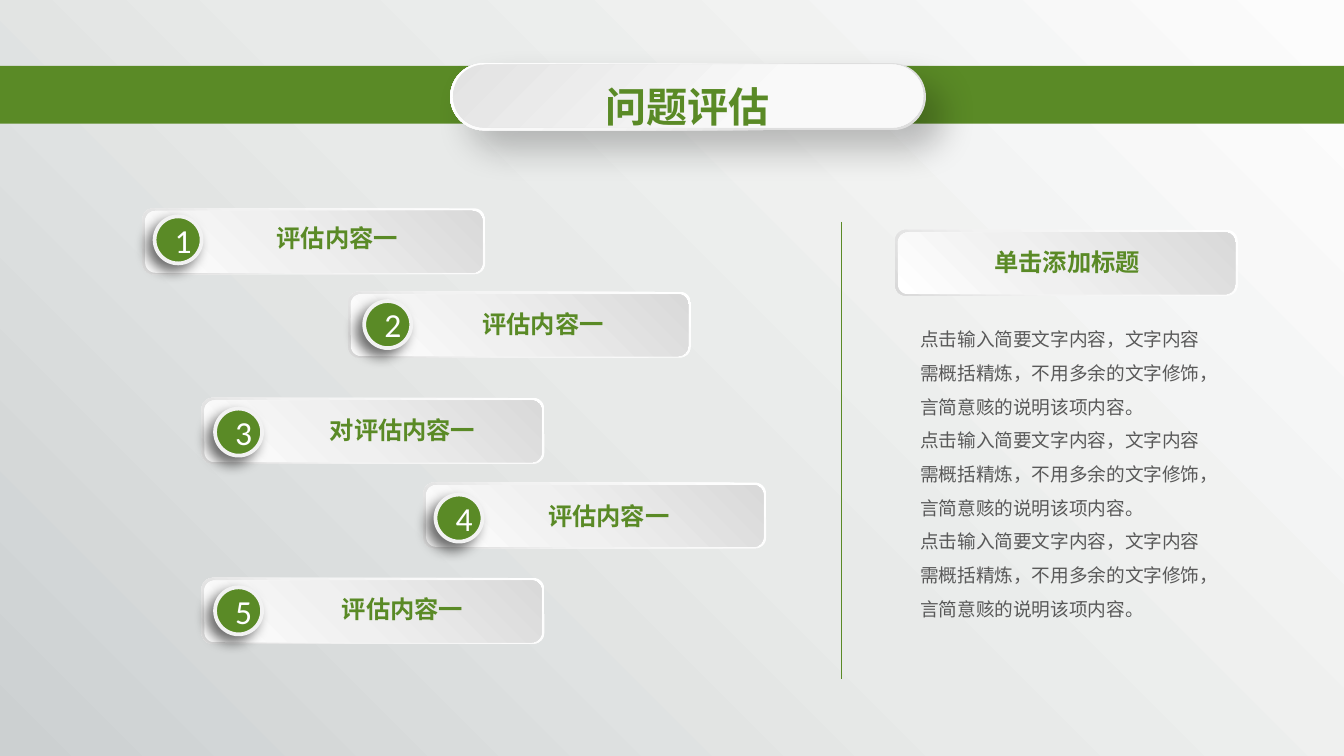
from lxml.etree import SubElement
from pptx import Presentation
from pptx.dml.color import RGBColor
from pptx.enum.shapes import MSO_CONNECTOR, MSO_SHAPE
from pptx.enum.text import MSO_ANCHOR, MSO_AUTO_SIZE, PP_ALIGN
from pptx.oxml.ns import qn
from pptx.util import Inches, Pt

WIDTH = 10
HEIGHT = WIDTH * 9 / 16
COLORS = {"green": "5A8A26", "rim": "F2F2F2", "white": "FFFFFF", "body": "595959", "shadow": "000000"}
CJK = "Noto Sans CJK SC"

# Gradients: stops as (percent, colour), then the clockwise angle
BACKDROP = ([(0, "CCD0D1"), (49, "E8EAE9"), (100, "FCFCFC")], 315)
TITLE_RIM = ([(1, "DEDEDE"), (30, "E0E0E0"), (61, "F6F6F6"), (100, "FFFFFF")], 225)
TITLE_FACE = ([(0, "E3E3E3"), (67, "F9F9F9")], 45)
PANEL_RIM = ([(0, "FFFFFF"), (62, "F2F2F2"), (100, "D9D9D9")], 135)
PANEL_FACE = ([(0, "FFFFFF"), (42, "F0F0F0"), (100, "D9D9D9")], 315)

# Shadows: opacity percent, blur, distance, direction
TITLE_SHADOW = (24, 19, 14, 45)
BADGE_SHADOW = (57, 7, 5, 135)

TITLE = "问题评估"
# Label, panel left and top, badge left and top, label left, top and width
ITEMS = [
    ("评估内容一", (1.06, 1.55), (1.15, 1.61), (1.43, 1.66, 2.16)),
    ("评估内容一", (2.59, 2.17), (2.71, 2.24), (3.00, 2.30, 2.08)),
    ("对评估内容一", (1.50, 2.96), (1.60, 3.04), (1.98, 3.09, 2.03)),
    ("评估内容一", (3.15, 3.59), (3.24, 3.68), (3.45, 3.73, 2.16)),
    ("评估内容一", (1.50, 4.30), (1.60, 4.37), (1.98, 4.42, 2.03)),
]
SIDE_HEADING = "单击添加标题"
SIDE_TEXT = ["点击输入简要文字内容，文字内容需概括精炼，不用多余的文字修饰，言简意赅的说明该项内容。"] * 3


def rgb(name):
    return RGBColor.from_string(COLORS[name])


def set_gradient(shape, stops, angle):
    shape.fill.gradient()
    shape.fill.gradient_angle = (360 - angle) % 360
    stop_list = shape.element.spPr.find(qn("a:gradFill")).find(qn("a:gsLst"))
    for old in list(stop_list):
        stop_list.remove(old)
    for percent, color in stops:
        stop = SubElement(stop_list, qn("a:gs"), pos=str(percent * 1000))
        SubElement(stop, qn("a:srgbClr"), val=color)


def set_shadow(shape, opacity, blur, distance, direction):
    effects = shape.element.spPr.find(qn("a:effectLst"))
    outer = SubElement(effects, qn("a:outerShdw"), blurRad=str(Pt(blur)), dist=str(Pt(distance)),
                       dir=str(direction * 60000), algn="ctr", rotWithShape="0")
    color = SubElement(outer, qn("a:srgbClr"), val=COLORS["shadow"])
    SubElement(color, qn("a:alpha"), val=str(opacity * 1000))


def add_box(parent, kind, area, fill):
    """Add an unlined shape; fill is a colour name or a gradient."""
    box = parent.shapes.add_shape(kind, *map(Inches, area))
    box.shadow.inherit = False
    box.line.fill.background()
    if isinstance(fill, str):
        box.fill.solid()
        box.fill.fore_color.rgb = rgb(fill)
    else:
        set_gradient(box, *fill)
    return box


def style(para, size, color, font=CJK, bold=False, align=PP_ALIGN.CENTER):
    para.alignment = align
    para.font.size = Pt(size)
    para.font.bold = bold
    para.font.color.rgb = rgb(color)
    para.font.name = font
    for span in para.runs:
        span.font.name = font
        SubElement(span.font._element, qn("a:ea"), typeface=font)


def add_text(parent, area, lines, size, color, spacing=None, inset=True, **look):
    box = parent.shapes.add_textbox(*map(Inches, area))
    frame = box.text_frame
    frame.word_wrap = True
    frame.auto_size = MSO_AUTO_SIZE.SHAPE_TO_FIT_TEXT
    if not inset:
        frame.margin_left = frame.margin_top = frame.margin_right = frame.margin_bottom = 0
    frame.text = "\n".join(lines)
    for para in frame.paragraphs:
        style(para, size, color, **look)
        if spacing:
            para.line_spacing = spacing


def add_panel(page, left, top):
    group = page.shapes.add_group_shape()
    add_box(group, MSO_SHAPE.ROUNDED_RECTANGLE, (left, top, 2.55, 0.49), PANEL_RIM)
    add_box(group, MSO_SHAPE.ROUNDED_RECTANGLE, (left + 0.02, top + 0.02, 2.51, 0.46), PANEL_FACE)
    return group


def add_label(group, left, top, width, text, font=CJK):
    add_text(group, (left, top, width, 0.22), [text], 13, "green", inset=False, font=font, bold=True)


def add_badge(group, left, top, number):
    badge = add_box(group, MSO_SHAPE.OVAL, (left, top, 0.35, 0.35), "green")
    badge.line.color.rgb = rgb("rim")
    badge.line.width = Pt(2)
    set_shadow(badge, *BADGE_SHADOW)
    frame = badge.text_frame
    frame.vertical_anchor = MSO_ANCHOR.MIDDLE
    frame.text = str(number)
    style(frame.paragraphs[0], 18, "white", font="Calibri")


def add_title(page):
    add_box(page, MSO_SHAPE.RECTANGLE, (-0.01, 0.49, 10.01, 0.43), "green")
    group = page.shapes.add_group_shape()
    rim = add_box(group, MSO_SHAPE.ROUNDED_RECTANGLE, (3.35, 0.47, 3.54, 0.5), TITLE_RIM)
    face = add_box(group, MSO_SHAPE.ROUNDED_RECTANGLE, (3.37, 0.48, 3.5, 0.47), TITLE_FACE)
    rim.adjustments[0] = face.adjustments[0] = 0.5
    set_shadow(rim, *TITLE_SHADOW)
    add_text(group, (3.89, 0.45, 2.45, 0.58), [TITLE], 22, "green", spacing=1.3, bold=True)


def add_divider(page):
    divider = page.shapes.add_connector(MSO_CONNECTOR.STRAIGHT, *map(Inches, (6.26, 1.65, 6.26, 5.05)))
    divider.line.color.rgb = rgb("green")
    divider.line.width = Pt(0.75)
    SubElement(divider.element.spPr, qn("a:effectLst"))


def main():
    deck = Presentation()
    deck.slide_width, deck.slide_height = Inches(WIDTH), Inches(HEIGHT)
    page = deck.slides.add_slide(deck.slide_layouts[6])

    for top in (0, 0.49):
        add_box(page, MSO_SHAPE.RECTANGLE, (0, top, WIDTH, HEIGHT - top), BACKDROP)
    add_title(page)

    for number, (text, panel, badge, label) in enumerate(ITEMS, 1):
        group = add_panel(page, *panel)
        add_badge(group, *badge, number)
        add_label(group, *label, text)

    add_divider(page)
    add_label(add_panel(page, 6.66, 1.71), 6.9, 1.84, 2.08, SIDE_HEADING, font="Arial")
    add_text(page, (6.75, 2.31, 2.36, 2.63), SIDE_TEXT, 10, "body", spacing=1.5, align=PP_ALIGN.LEFT)

    deck.save("out.pptx")


if __name__ == "__main__":
    main()
